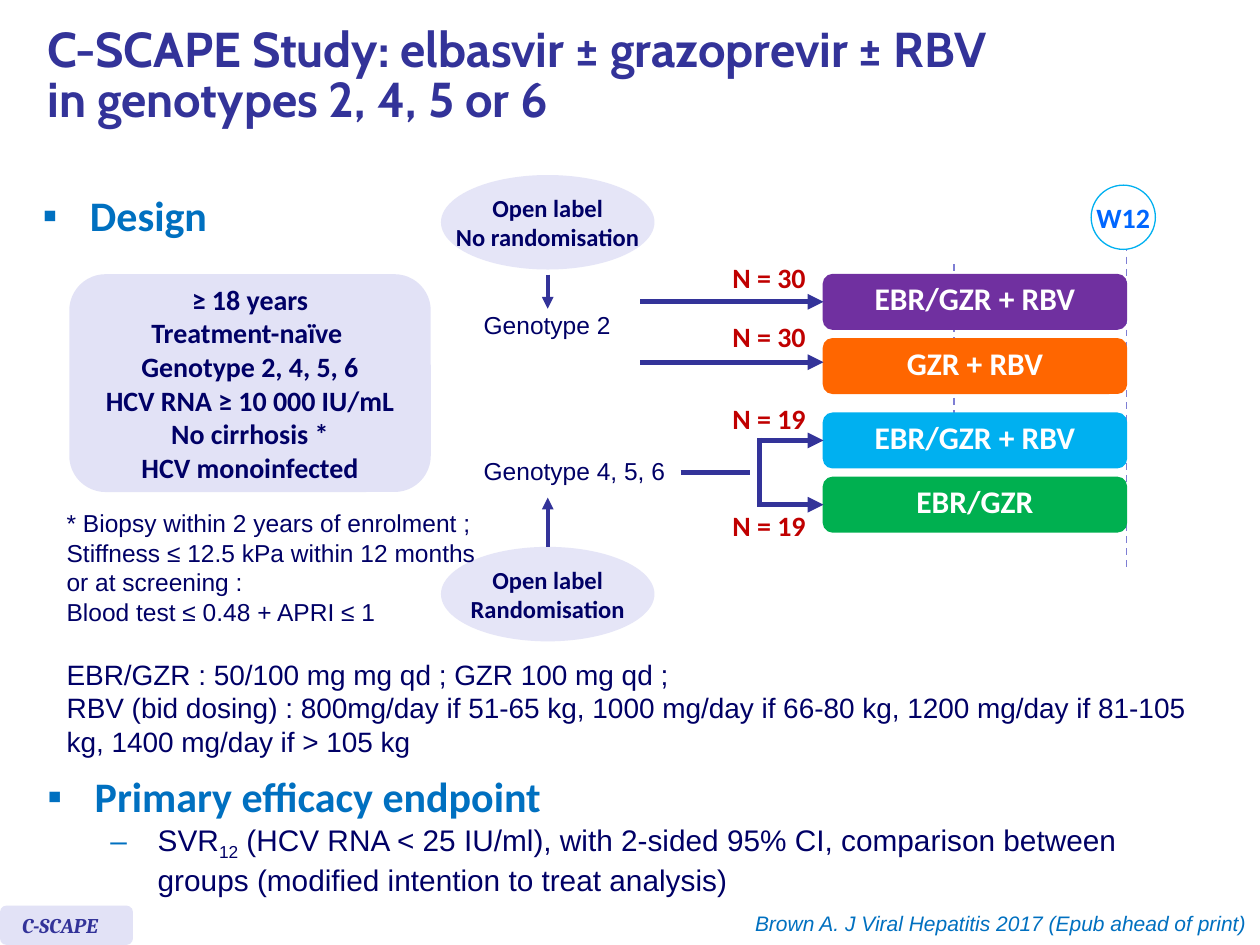
"""Build the C-SCAPE study design slide."""
from dataclasses import dataclass

from lxml import etree
from pptx import Presentation
from pptx import util as u
from pptx.dml.color import RGBColor
from pptx.enum import dml, shapes, text
from pptx.oxml.ns import qn


@dataclass(frozen=True)
class Theme:
    navy: str = "000066"
    indigo: str = "333399"
    blue: str = "0070C0"
    cyan: str = "00B0F0"
    week: str = "0066FF"
    red: str = "C00000"
    white: str = "FFFFFF"
    lilac: str = "E2E2F6"
    pale: str = "E5E5F7"
    dash: str = "7E7ED4"
    head: str = "Calibri"
    body: str = "Arial"
    title: str = "Cabin"
    tag: str = "Cambria"
    title_size: float = 28
    heading: float = 24
    bar: float = 18
    sub: float = 17
    main: float = 16
    small: float = 14
    foot: float = 12


T = Theme()
TITLE = "C-SCAPE Study: elbasvir ± grazoprevir ± RBV \nin genotypes 2, 4, 5 or 6"
CRITERIA = ["≥ 18 years", "Treatment-naïve ", "Genotype 2, 4, 5, 6",
            "HCV RNA ≥ 10 000 IU/mL", "No cirrhosis *", "HCV monoinfected"]
BIOPSY = ["* Biopsy within 2 years of enrolment ;",
          "Stiffness ≤ 12.5 kPa within 12 months or at screening :",
          "Blood test ≤ 0.48 + APRI ≤ 1"]
DOSING = ["EBR/GZR : 50/100 mg mg qd ; GZR 100 mg qd ;",
          "RBV (bid dosing) : 800mg/day if 51-65 kg, 1000 mg/day if 66-80 kg, "
          "1200 mg/day if 81-105 kg, 1400 mg/day if > 105 kg"]
ENDPOINT = ("SVR~12~ (HCV RNA < 25 IU/ml), with 2-sided 95% CI, comparison between "
            "groups (modified intention to treat analysis)")
# name, colour, bar top, label, label top, arrow start x, arrow y, joined to bar
ARM_KEYS = ("name", "color", "top", "count", "count_y", "start", "y", "joined")
ARMS = [("EBR/GZR + RBV", "7030A0", 157, "N = 30", 145.4, 366, 172.5, True),
        ("GZR + RBV", "FF6600", 193.7, "N = 30", 179.3, 366, 207, False),
        ("EBR/GZR + RBV", T.cyan, 236.2, "N = 19", 226, 434, 251.7, True),
        ("EBR/GZR", "00B050", 272.9, "N = 19", 287.3, 434, 288.4, True)]
COHORTS = [("Genotype 2", 173.5), ("Genotype 4, 5, 6", 257)]
MODES = [(["Open label", "No randomisation"], 100), (["Open label", "Randomisation"], 312.5)]
WEEKS = [(643.7, 139.7, 327), (545, 151, 264)]
BAR_X, BAR_W, BAR_H = 470.6, 173, 31
MODE_X, MODE_W, MODE_H = 252, 122, 54
ARROW_X = MODE_X + MODE_W / 2

ALIGN = text.PP_ALIGN
MIDDLE = text.MSO_ANCHOR.MIDDLE
ROUND, OVAL = shapes.MSO_SHAPE.ROUNDED_RECTANGLE, shapes.MSO_SHAPE.OVAL


def rgb(value):
    return RGBColor.from_string(value)


def write(tf, lines, size, color=T.navy, font=T.body, bold=False, italic=False,
          align=ALIGN.LEFT, spacing=None, bullet=None, indent=0):
    for line in lines:
        p = tf.paragraphs[0]
        if p.runs:
            p = tf.add_paragraph()
        p.alignment = align
        if bullet:
            pPr = p._p.get_or_add_pPr()
            pPr.set("marL", str(u.Pt(indent)))
            pPr.set("indent", str(-u.Pt(27)))
            clr = etree.SubElement(pPr, qn("a:buClr"))
            etree.SubElement(clr, qn("a:srgbClr"), val=T.blue)
            etree.SubElement(pPr, qn("a:buFont"), typeface=T.body)
            etree.SubElement(pPr, qn("a:buChar"), char=bullet)
        if spacing:
            p.line_spacing = spacing
        for row, part in enumerate(line.split("\n")):
            if row:
                p.add_line_break()
            for i, piece in enumerate(part.split("~")):
                r = p.add_run()
                r.text = piece
                f = r.font
                f.size, f.name, f.bold, f.italic = u.Pt(size), font, bold, italic
                f.color.rgb = rgb(color)
                if i % 2:
                    r._r.get_or_add_rPr().set("baseline", "-25000")


def box(s, x, y, w, h, kind=None, fill=None, line=None, weight=1, anchor=None, wrap=True):
    at = [u.Pt(v) for v in (x, y, w, h)]
    if kind is None:
        sp = s.shapes.add_textbox(*at)
    else:
        sp = s.shapes.add_shape(kind, *at)
        sp.shadow.inherit = False
        sp.fill.solid()
        sp.fill.fore_color.rgb = rgb(fill)
        if line:
            sp.line.color.rgb = rgb(line)
            sp.line.width = u.Pt(weight)
        else:
            sp.line.fill.background()
    tf = sp.text_frame
    tf.word_wrap = wrap
    tf.vertical_anchor = anchor or text.MSO_ANCHOR.TOP
    return sp


def connect(s, x1, y1, x2, y2, weight=3.0, color=T.indigo, arrow=False, dashed=False):
    c = s.shapes.add_connector(shapes.MSO_CONNECTOR.STRAIGHT,
                               *[u.Pt(v) for v in (x1, y1, x2, y2)])
    c.line.color.rgb = rgb(color)
    c.line.width = u.Pt(weight)
    if dashed:
        c.line.dash_style = dml.MSO_LINE.DASH
    if arrow:
        etree.SubElement(c.line._get_or_add_ln(), qn("a:tailEnd"), type="triangle")
    etree.SubElement(c._element.spPr, qn("a:effectLst"))
    return c


def add_texts(s):
    sp = box(s, 20, 6, 683, 77, anchor=MIDDLE)
    write(sp.text_frame, [TITLE], T.title_size, T.indigo, T.title, bold=True, spacing=0.85)
    heading = dict(size=T.heading, color=T.blue, font=T.head, bold=True, bullet="▪", indent=27)
    write(box(s, 17.3, 105, 142, 45).text_frame, ["Design"], **heading)
    sp = box(s, 39.6, 156.7, 206.6, 124.5, ROUND, T.lilac, anchor=MIDDLE)
    write(sp.text_frame, CRITERIA, T.main, font=T.head, bold=True, align=ALIGN.CENTER)
    write(box(s, 31, 287, 255, 75).text_frame, BIOPSY, T.small)
    write(box(s, 31, 372, 663, 65.5).text_frame, DOSING, T.main)
    tf = box(s, 20, 437, 675, 78).text_frame
    write(tf, ["Primary efficacy endpoint"], **heading)
    write(tf, [ENDPOINT], T.sub, bullet="–", indent=63)
    sp = box(s, 0, 517.5, 76, 22.5, ROUND, T.lilac, anchor=MIDDLE)
    sp.text_frame.margin_left, sp.text_frame.margin_right = u.Pt(11.5), 0
    write(sp.text_frame, ["C-SCAPE"], T.foot, T.indigo, T.tag, bold=True, italic=True)
    write(box(s, 394.6, 517, 324.7, 21.6).text_frame,
          ["Brown A. J Viral Hepatitis 2017 (Epub ahead of print)"],
          T.foot, T.blue, italic=True, align=ALIGN.RIGHT)


def add_diagram(s):
    for x, top, bottom in WEEKS:
        connect(s, x, top, x, bottom, 1, T.dash, dashed=True)
    label = dict(font=T.head, bold=True, align=ALIGN.CENTER)
    sp = box(s, 623.5, 105.8, 36.7, 36.7, OVAL, T.white, T.cyan, 0.75, MIDDLE, wrap=False)
    write(sp.text_frame, ["W12"], T.main, T.week, **label)
    for lines, y in MODES:
        mode = box(s, MODE_X, y, MODE_W, MODE_H, OVAL, T.pale, anchor=MIDDLE, wrap=False)
        write(mode.text_frame, lines, T.small, **label)
    connect(s, ARROW_X, 157, ARROW_X, 176.4, 2.25, arrow=True)
    connect(s, ARROW_X, 312.5, ARROW_X, 284.4, 2.25, arrow=True).begin_connect(mode, 0)
    for name, y in COHORTS:
        write(box(s, 269.3, y, 119, 24.5, wrap=False).text_frame, [name], T.small)
    arms = [dict(zip(ARM_KEYS, row)) for row in ARMS]
    for arm in arms:
        bar = box(s, BAR_X, arm["top"], BAR_W, BAR_H, ROUND, arm["color"], arm["color"],
                  anchor=MIDDLE)
        write(bar.text_frame, [arm["name"]], T.bar, T.white, spacing=0.8, **label)
        sp = box(s, 411, arm["count_y"], 57, 26.6, wrap=False)
        write(sp.text_frame, [arm["count"]], T.main, T.red, **label)
        arrow = connect(s, arm["start"], arm["y"], BAR_X, arm["y"], arrow=True)
        if arm["joined"]:
            arrow.end_connect(bar, 1)
    upper, lower = arms[2:]
    connect(s, upper["start"], upper["y"] - 1.5, lower["start"], lower["y"] + 1.5)
    connect(s, 389, 270, 428.5, 270)


def main():
    prs = Presentation()
    prs.slide_width, prs.slide_height = u.Pt(720), u.Pt(540)
    s = prs.slides.add_slide(prs.slide_layouts[6])
    add_diagram(s)
    add_texts(s)
    prs.save("out.pptx")


if __name__ == "__main__":
    main()
